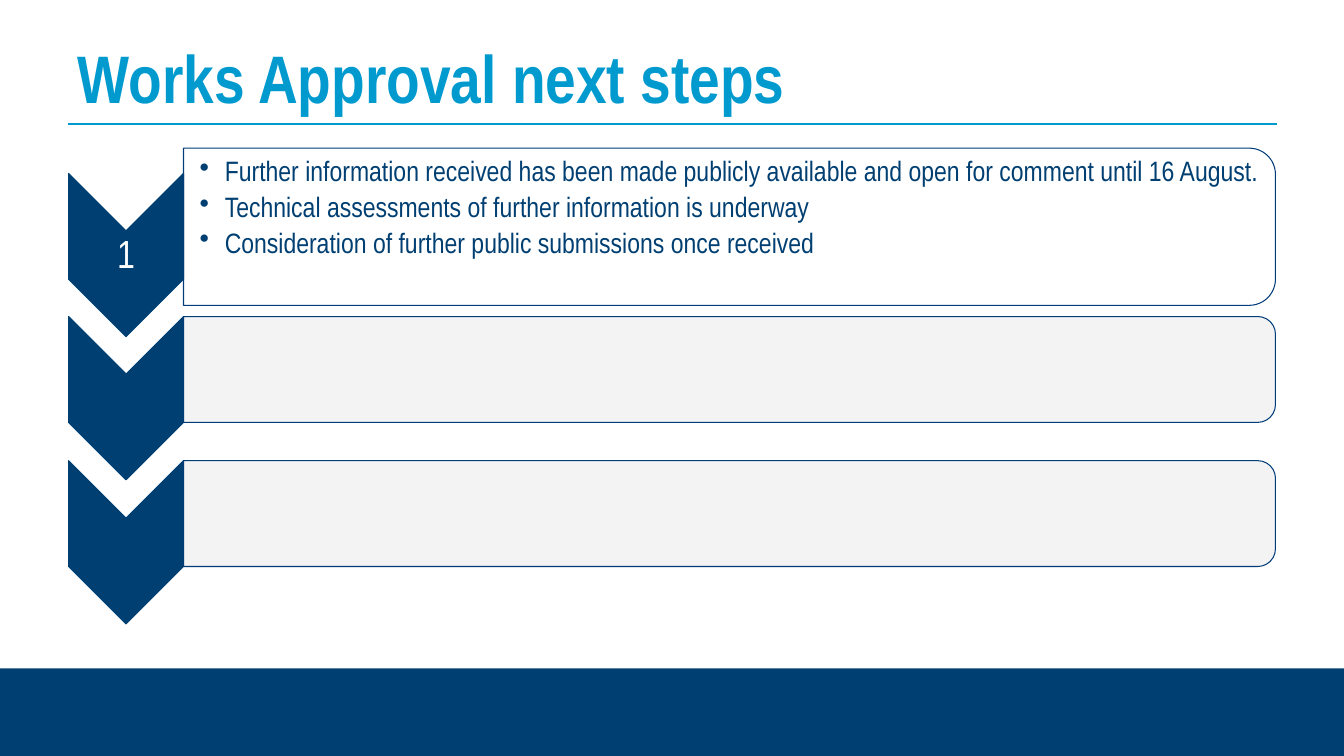
from pptx import Presentation
from pptx.dml.color import RGBColor
from pptx.enum.shapes import MSO_CONNECTOR, MSO_SHAPE as Preset
from pptx.enum.text import MSO_ANCHOR as Anchor, PP_ALIGN as Align
from pptx.oxml import parse_xml
from pptx.oxml.ns import nsdecls, qn
from pptx.util import Pt
from lxml import etree

PX = 9144  # 100 px to the inch
NAVY, EDGE, CYAN, GREY, WHITE = "003F72", "003C79", "009ACF", "F2F2F2", "FFFFFF"


def rgb(code):
    return RGBColor.from_string(code)


def add_turned(preset, left, top, width, height, fill, line):
    """Add a preset turned 90 degrees clockwise; the frame is the one seen on the slide."""
    shift = (width - height) / 2
    frame = (left + shift, top - shift, height, width)
    shape = page.shapes.add_shape(preset, *(int(side * PX) for side in frame))
    shape.rotation = 90
    shape.shadow.inherit = False
    if fill:
        shape.fill.solid()
        shape.fill.fore_color.rgb = rgb(fill)
    else:
        shape.fill.background()
    shape.line.color.rgb = rgb(line)
    shape.line.width = Pt(0.75)
    return shape


deck = Presentation()
deck.slide_width, deck.slide_height = 1333 * PX, 750 * PX
page = deck.slides.add_slide(deck.slide_layouts[5])

# Footer band and title rule
band = page.shapes.add_shape(Preset.RECTANGLE, 0, 663 * PX, 1333 * PX, 87 * PX)
band.shadow.inherit = False
band.fill.solid()
band.fill.fore_color.rgb = rgb(NAVY)
band.line.fill.background()

rule = page.shapes.add_connector(
    MSO_CONNECTOR.STRAIGHT, 67 * PX, 123 * PX, 1267 * PX, 123 * PX)
rule.line.color.rgb = rgb(CYAN)
rule.line.width = Pt(1.5)
etree.SubElement(rule._element.spPr, qn("a:effectLst"))

# Step chevrons and their panels: chevron top, panel top, panel height, panel fill
steps = [(172, 147, 156, None), (314, 314, 105, GREY), (457, 457, 105, GREY)]
for chevron_top, panel_top, panel_height, panel_fill in steps:
    add_turned(Preset.CHEVRON, 68, chevron_top, 114, 162, NAVY, NAVY)
    panel = add_turned(Preset.ROUND_2_SAME_RECTANGLE, 182, panel_top, 1083,
                       panel_height, panel_fill, EDGE)
    if panel_fill:
        color = panel._element.spPr.find(qn("a:solidFill"))[0]
        etree.SubElement(color, qn("a:alpha"), val="90000")

# Texts
title = page.shapes.title
number = page.shapes.add_textbox(0, 0, 0, 0)
details = page.shapes.add_textbox(0, 0, 0, 0)
texts = [
    (title, (67, 30, 1200, 93), (10, 5, 10, 5), Anchor.MIDDLE,
     ["Works Approval next steps"],
     dict(alignment=Align.LEFT), dict(size=Pt(48), bold=True), CYAN),
    (number, (68, 229, 114, 49), (2, 2, 2, 2), Anchor.MIDDLE,
     ["1"],
     dict(alignment=Align.CENTER, line_spacing=0.9), dict(size=Pt(28)), WHITE),
    (details, (182, 155, 1076, 140), (16, 1, 1, 1), Anchor.TOP,
     ["Further information received has been made publicly available "
      "and open for comment until 16 August.",
      "Technical assessments of further information is underway",
      "Consideration of further public submissions once received"],
     dict(alignment=Align.LEFT, line_spacing=0.9, space_after=Pt(4)),
     dict(size=Pt(20)), NAVY),
]
for box, place, insets, anchor, lines, para_format, font_format, color in texts:
    for side, length in zip(("left", "top", "width", "height"), place):
        setattr(box, side, length * PX)
    frame = box.text_frame
    frame.word_wrap = True
    frame.vertical_anchor = anchor
    for side, length in zip(("left", "top", "right", "bottom"), insets):
        setattr(frame, f"margin_{side}", length * PX)
    frame.text = "\n".join(lines)
    for para in frame.paragraphs:
        for name, value in para_format.items():
            setattr(para, name, value)
        if box is details:
            props = para._p.get_or_add_pPr()
            props.set("marL", str(25 * PX))
            props.set("indent", str(-25 * PX))
            props.append(parse_xml(f'<a:buChar {nsdecls("a")} char="•"/>'))
        font = para.runs[0].font
        for name, value in dict(font_format, name="Arial Narrow").items():
            setattr(font, name, value)
        font.color.rgb = rgb(color)

deck.save("out.pptx")
